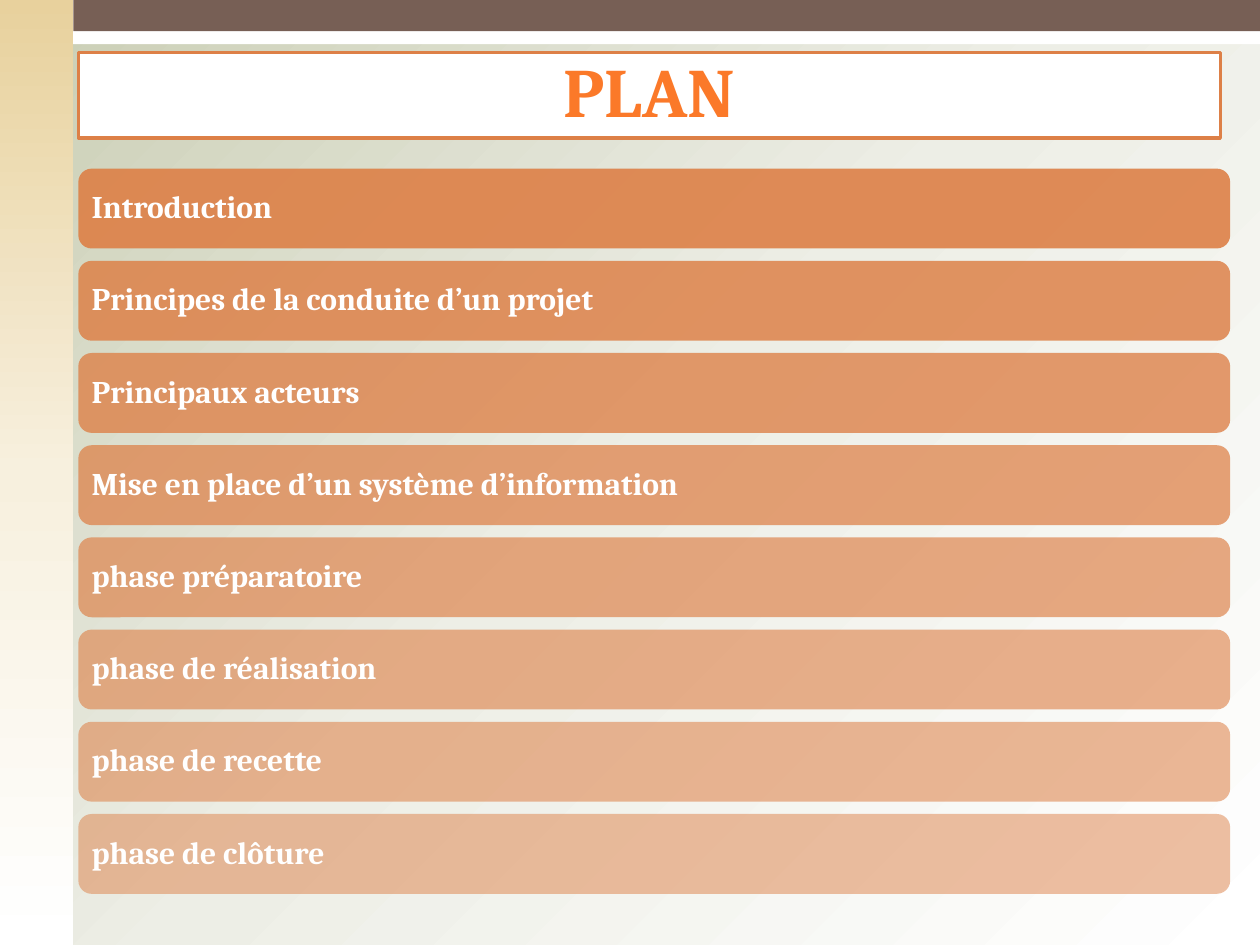
from copy import deepcopy
from lxml import etree
from pptx import Presentation
from pptx.dml.color import RGBColor
from pptx.enum import shapes, text
from pptx.oxml import ns
from pptx.util import Cm, Pt

HUES = {
    "white": "FFFFFF", "brown": "775F55", "rust": "DD8047", "title": "FB7929",
    "sand": "E8D19D", "cream": "F7F0DE", "sage": "C9CDB3", "mist": "EDEEE6",
}
ITEMS = [
    "Introduction",
    "Principes de la conduite d’un projet",
    "Principaux acteurs",
    "Mise en place d’un système d’information",
    "phase préparatoire",
    "phase de réalisation",
    "phase de recette",
    "phase de clôture",
]
HEAD = {"name": "Cambria", "size": Pt(39.6), "bold": True}
LABEL = {"name": "Cambria", "size": Pt(18), "bold": True}


def hue(key):
    return RGBColor.from_string(HUES[key])


def apply(obj, vals):
    for key, val in vals.items():
        setattr(obj, key, val)


def paint(fill, key):
    fill.solid()
    fill.fore_color.rgb = hue(key)


def blend(fill, node, keys, angle):
    """Three-stop gradient, angle measured clockwise."""
    fill.gradient()
    fill.gradient_angle = 360 - angle
    first = node.find(".//" + ns.qn("a:gs"))
    first.addnext(deepcopy(first))
    for stop, key, pos in zip(fill.gradient_stops, keys, (0, 0.5, 1)):
        stop.color.rgb = hue(key)
        stop.position = pos


def block(slide, kind, box):
    shape = slide.shapes.add_shape(kind, *map(Cm, box))
    shape.shadow.inherit = False
    shape.line.fill.background()
    return shape


def frame(slide, box):
    """Page background, top bands and side strip."""
    x, y, w, h = box
    side, band, top = 1.48, 0.89, 0.63
    rect = shapes.MSO_SHAPE.RECTANGLE
    blend(slide.background.fill, slide.element, ("sage", "mist", "white"), 45)
    paint(block(slide, rect, (x, y, w, band)).fill, "white")
    strip = block(slide, rect, (x, y, side, h))
    blend(strip.fill, strip.element, ("sand", "cream", "white"), 90)
    paint(block(slide, rect, (x + side, y, w - side, top)).fill, "brown")


def header(slide, box):
    """Framed title."""
    title = slide.shapes.title
    apply(title, dict(zip(("left", "top", "width", "height"), map(Cm, box))))
    paint(title.fill, "white")
    paint(title.line.fill, "rust")
    title.line.width = Pt(2)
    body = title.text_frame
    body.text = "PLAN"
    apply(body, {"auto_size": text.MSO_AUTO_SIZE.NONE,
                 "vertical_anchor": text.MSO_ANCHOR.BOTTOM})
    para = body.paragraphs[0]
    para.alignment = text.PP_ALIGN.CENTER
    apply(para.runs[0].font, HEAD)
    para.runs[0].font.color.rgb = hue("title")


def bar(slide, box, words, alpha):
    """One rounded bar with its label."""
    shape = block(slide, shapes.MSO_SHAPE.ROUNDED_RECTANGLE, box)
    paint(shape.fill, "rust")
    tint = shape.element.spPr.find(".//" + ns.qn("a:srgbClr"))
    etree.SubElement(tint, ns.qn("a:alpha"), val=str(round(alpha * 1000)))
    body = shape.text_frame
    body.text = words
    sides = ("left", "top", "right", "bottom")
    apply(body, {f"margin_{side}": Cm(0.19) for side in sides})
    apply(body, {"word_wrap": True, "vertical_anchor": text.MSO_ANCHOR.MIDDLE})
    para = body.paragraphs[0]
    apply(para, {"alignment": text.PP_ALIGN.LEFT, "line_spacing": 0.9})
    apply(para.runs[0].font, LABEL)
    para.runs[0].font.color.rgb = hue("white")


def agenda(slide, box):
    """Evenly spaced bars, fading from 90 % to 50 % opacity."""
    x, y, w, h = box
    tall = 1.61
    last = len(ITEMS) - 1
    step = (h - tall) / last
    for i, words in enumerate(ITEMS):
        bar(slide, (x, y + i * step, w, tall), words, 90 - 40 * i / last)


def main():
    deck = Presentation()
    apply(deck, {"slide_width": Cm(25.4), "slide_height": Cm(19.05)})
    slide = deck.slides.add_slide(deck.slide_layouts[5])
    frame(slide, (0, 0, 25.4, 19.05))
    header(slide, (1.58, 1.06, 23.02, 1.72))
    agenda(slide, (1.58, 3.4, 23.22, 14.62))
    deck.save("out.pptx")


if __name__ == "__main__":
    main()
